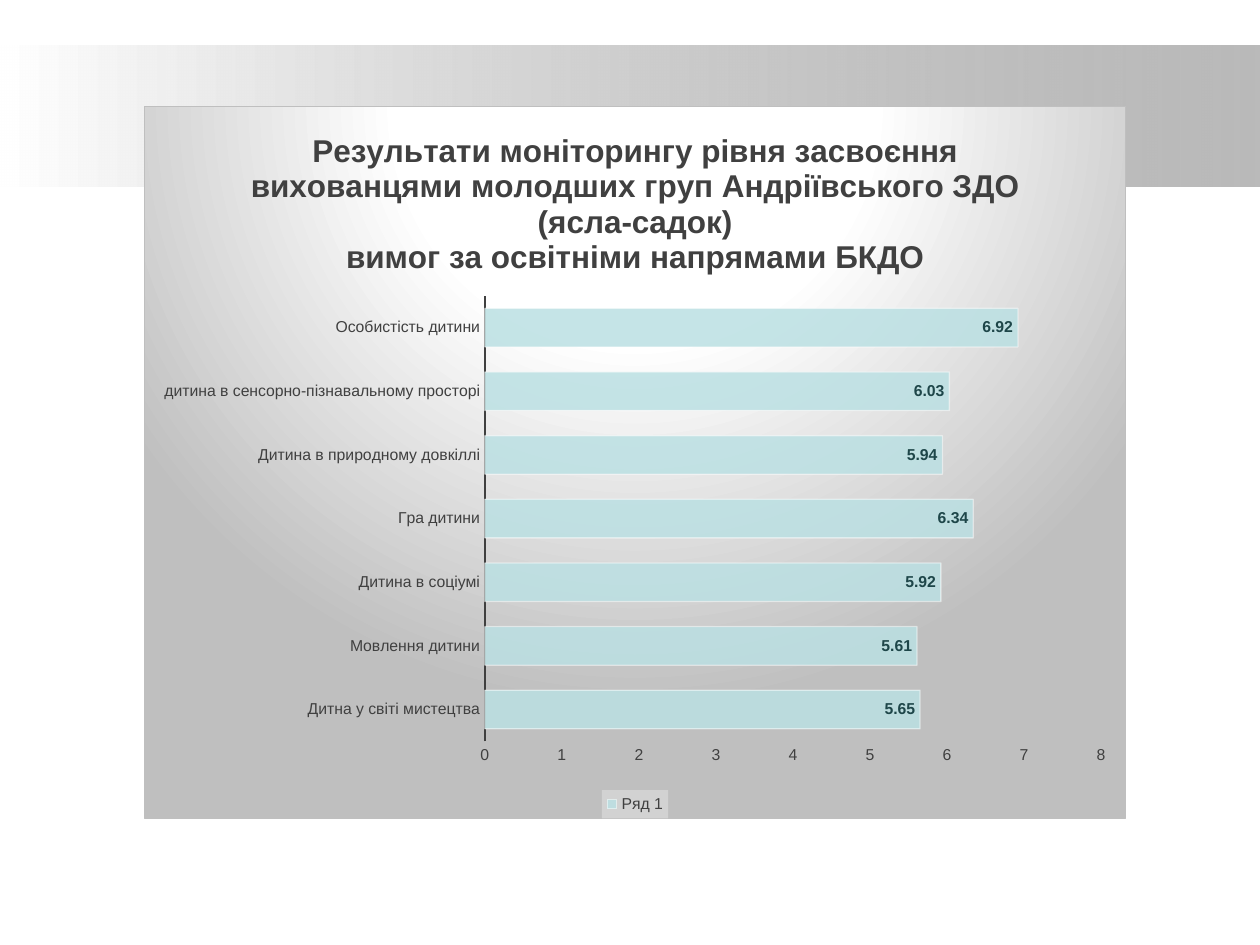
from lxml import etree
from pptx import Presentation, util as u
from pptx.chart.data import CategoryChartData
from pptx.dml.color import RGBColor
from pptx.enum import chart as ch, shapes
from pptx.oxml import parse_xml
from pptx.oxml.ns import nsdecls, qn

COLORS = {"white": "FFFFFF", "band": "808080", "edge": "BFBFBF", "text": "404040",
          "bar": "BBE0E3", "label": "1E4649", "legend": "F2F2F2"}
TITLE = ["Результати моніторингу рівня засвоєння вихованцями молодших груп "
         "Андріївського ЗДО (ясла-садок)",
         "вимог за освітніми напрямами БКДО"]
SCORES = {"Дитна у світі мистецтва": 5.65, "Мовлення дитини": 5.61,
          "Дитина в соціумі": 5.92, "Гра дитини": 6.34,
          "Дитина в природному довкіллі": 5.94,
          "дитина в сенсорно-пізнавальному просторі": 6.03,
          "Особистість дитини": 6.92}


def style_font(font, size, color, bold=False):
    font.name, font.size, font.bold = "Arial", u.Pt(size), bold
    font.color.rgb = RGBColor.from_string(COLORS[color])


def set_alpha(fill, percent):
    """Make a solid fill element partly transparent."""
    color = fill.find(".//" + qn("a:srgbClr"))
    etree.SubElement(color, qn("a:alpha")).set("val", str(percent * 1000))


deck = Presentation()
deck.slide_width, deck.slide_height = u.Inches(10), u.Inches(7.5)
W, H = deck.slide_width, deck.slide_height
page = deck.slides.add_slide(deck.slide_layouts[6])

# Band fading in from the left
band = page.shapes.add_shape(shapes.MSO_SHAPE.RECTANGLE, 0, int(H * 0.048), W, int(H * 0.1493))
band.shadow.inherit = False
band.line.fill.background()
band.fill.gradient()
band.fill.gradient_angle = 0
for stop, name, position in zip(band.fill.gradient_stops, ("white", "band"), (0, 1)):
    stop.color.rgb = RGBColor.from_string(COLORS[name])
    stop.position = position
band_stops = band._element.spPr.findall(".//" + qn("a:gs"))
set_alpha(band_stops[-1], 54)

# Bar chart
data = CategoryChartData()
data.categories = list(SCORES)
data.add_series("Ряд 1", list(SCORES.values()))
chart = page.shapes.add_chart(ch.XL_CHART_TYPE.BAR_CLUSTERED, int(W * 0.114), int(H * 0.112),
                              int(W * 0.78), int(H * 0.7547), data).chart
style_font(chart.font, 10, "text")

# Chart title
chart.has_title = True
frame = chart.chart_title.text_frame
for index, line in enumerate(TITLE):
    para = frame.paragraphs[0] if index == 0 else frame.add_paragraph()
    span = para.add_run()
    span.text = line
    style_font(span.font, 18, "text", bold=True)

# Chart background: radial gradient and thin border
stops = "".join(f'<a:gs pos="{pos}000"><a:srgbClr val="{COLORS[name]}"/></a:gs>'
                for pos, name in ((0, "white"), (39, "white"), (100, "edge")))
background = parse_xml(
    f'<c:spPr {nsdecls("c", "a")}><a:gradFill><a:gsLst>{stops}</a:gsLst>'
    '<a:path path="circle"><a:fillToRect l="50000" t="-80000" r="50000" b="180000"/></a:path>'
    f'</a:gradFill><a:ln w="9525"><a:solidFill><a:srgbClr val="{COLORS["edge"]}"/>'
    '</a:solidFill></a:ln></c:spPr>')
chart._chartSpace.find(qn("c:chart")).addnext(background)

# Plot area position, as shares of the chart
plot_area = chart._chartSpace.find(".//" + qn("c:plotArea"))
for old in plot_area.findall(qn("c:layout")):
    plot_area.remove(old)
shares = "".join(f'<c:{key} val="{value}"/>' for key, value in
                 (("x", 0.347), ("y", 0.266), ("w", 0.628), ("h", 0.626)))
plot_area.insert(0, parse_xml(
    f'<c:layout {nsdecls("c")}><c:manualLayout><c:layoutTarget val="inner"/>'
    f'<c:xMode val="edge"/><c:yMode val="edge"/>{shares}</c:manualLayout></c:layout>'))

# Axes
for axis in (chart.category_axis, chart.value_axis):
    axis.has_major_gridlines = False
    axis.major_tick_mark = axis.minor_tick_mark = ch.XL_TICK_MARK.NONE
    style_font(axis.tick_labels.font, 9, "text")
chart.category_axis.format.line.color.rgb = RGBColor.from_string(COLORS["text"])
chart.category_axis.format.line.width = u.Pt(1.5)
chart.value_axis.format.line.fill.background()
chart.value_axis.minimum_scale, chart.value_axis.maximum_scale = 0, 8
chart.value_axis.major_unit = 1

# Bars and their labels
plot = chart.plots[0]
plot.gap_width = 65
plot.vary_by_categories = False
bars = plot.series[0]
bars.format.fill.solid()
bars.format.fill.fore_color.rgb = RGBColor.from_string(COLORS["bar"])
bars.format.line.color.rgb = RGBColor.from_string(COLORS["white"])
bars.format.line.width = u.Pt(0.75)
bar_style = bars._element.find(qn("c:spPr"))
set_alpha(bar_style.find(qn("a:solidFill")), 85)
set_alpha(bar_style.find(qn("a:ln")), 50)
labels = bars.data_labels
labels.show_value = True
labels.position = ch.XL_LABEL_POSITION.INSIDE_END
style_font(labels.font, 9, "label", bold=True)

# Legend on a translucent plate
chart.has_legend = True
legend = chart.legend
legend.position = ch.XL_LEGEND_POSITION.BOTTOM
legend.include_in_layout = False
style_font(legend.font, 9, "text")
plate = parse_xml(f'<c:spPr {nsdecls("c", "a")}><a:solidFill>'
                  f'<a:srgbClr val="{COLORS["legend"]}"/></a:solidFill></c:spPr>')
set_alpha(plate, 39)
legend._element.find(qn("c:txPr")).addprevious(plate)

deck.save("out.pptx")
